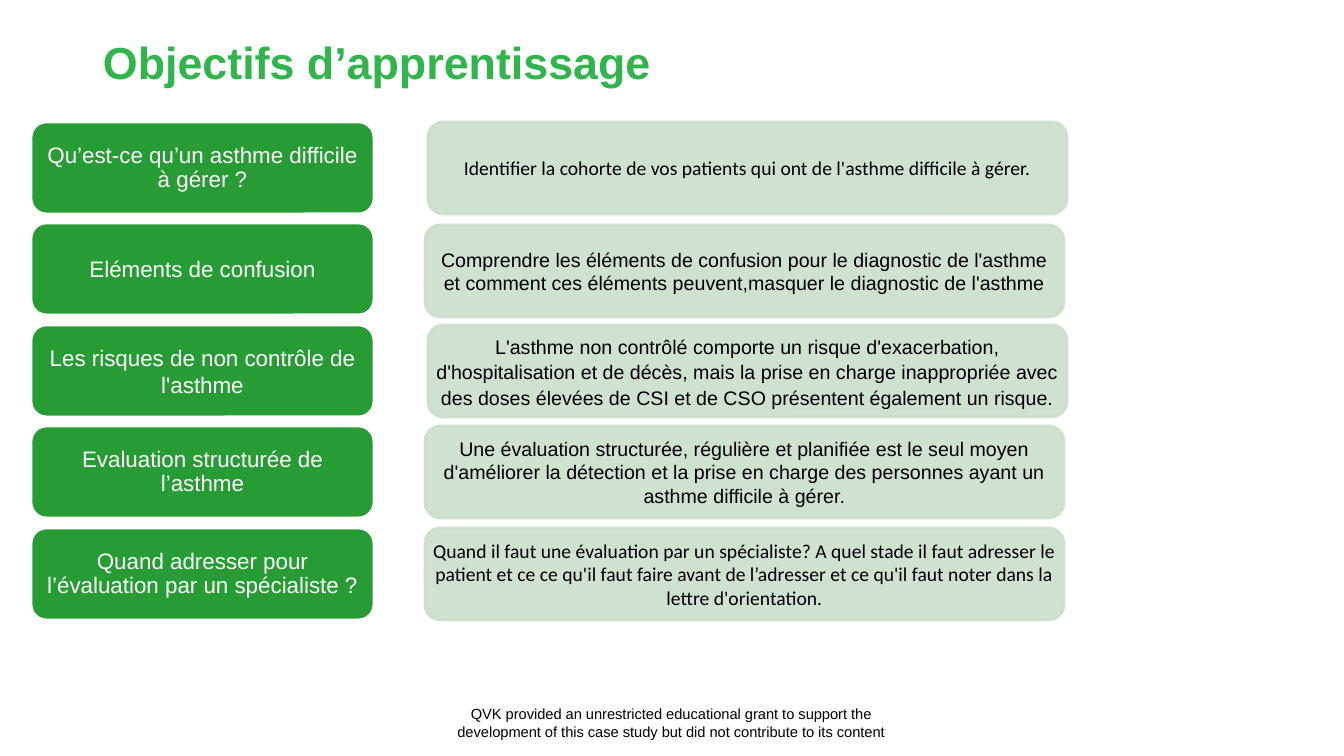
from lxml.etree import SubElement
from pptx import Presentation
from pptx.dml.color import RGBColor
from pptx.enum.shapes import MSO_SHAPE
from pptx.enum.text import MSO_ANCHOR, MSO_AUTO_SIZE, PP_ALIGN
from pptx.oxml.ns import qn
from pptx.util import Emu, Pt

PX = 914400 / 100.8
TITLE_GREEN = RGBColor(0x31, 0xB4, 0x4B)
TOPIC_GREEN = RGBColor(0x27, 0x9C, 0x34)
PALE_GREEN = RGBColor(0xCB, 0xDE, 0xCC)
WHITE = RGBColor(0xFF, 0xFF, 0xFF)
BLACK = RGBColor(0, 0, 0)

ROW_TOP, ROW_PITCH, ROW_HEIGHT = 122, 101.5, 92

# topic, its line spacing, goal, its font, its line spacing, goal left, goal shift down
objectives = [
    ("Qu’est-ce qu’un asthme difficile à gérer ?", 0.9,
     "Identifier la cohorte de vos patients qui ont de l'asthme difficile à gérer.",
     "Calibri", 1.0, 428, 0),
    ("Eléments de confusion", 1.0,
     "Comprendre les éléments de confusion pour le diagnostic de l'asthme et comment "
     "ces éléments peuvent,masquer le diagnostic de l'asthme",
     "Arial", 1.0, 425, 2),
    ("Les risques de non contrôle de l'asthme", 1.0,
     "L'asthme non contrôlé comporte un risque d'exacerbation, d'hospitalisation et de "
     "décès, mais la prise en charge inappropriée avec des doses élevées de CSI et de "
     "CSO présentent également un risque.",
     "Arial", 1.09, 428, 0),
    ("Evaluation structurée de l’asthme", 0.9,
     "Une évaluation structurée, régulière et planifiée est le seul moyen d'améliorer "
     "la détection et la prise en charge des personnes ayant un asthme difficile à gérer.",
     "Arial", 1.0, 425, 0),
    ("Quand adresser pour l’évaluation par un spécialiste ?", 0.9,
     "Quand il faut une évaluation par un spécialiste? A quel stade il faut adresser le "
     "patient et ce ce qu'il faut faire avant de l’adresser et ce qu'il faut noter dans "
     "la lettre d'orientation.",
     "Calibri", 1.0, 425, 0),
]


def write(shape, text, size, color, font="Arial", bold=False, align=PP_ALIGN.CENTER,
          anchor=MSO_ANCHOR.MIDDLE, spacing=1.0, inset=(10, 5)):
    frame = shape.text_frame
    frame.text = text
    frame.word_wrap = True
    frame.auto_size = MSO_AUTO_SIZE.NONE
    frame.vertical_anchor = anchor
    frame.margin_left = frame.margin_right = Emu(round(inset[0] * PX))
    frame.margin_top = frame.margin_bottom = Emu(round(inset[1] * PX))
    paragraph = frame.paragraphs[0]
    paragraph.alignment = align
    paragraph.line_spacing = spacing
    run_font = paragraph.runs[0].font
    run_font.name, run_font.size, run_font.bold = font, Pt(size), bold
    run_font.color.rgb = color


def add_card(left, top, width, fill, outline, opacity=100):
    card = slide.shapes.add_shape(
        MSO_SHAPE.ROUNDED_RECTANGLE,
        *(Emu(round(n * PX)) for n in (left, top, width, ROW_HEIGHT)))
    card.shadow.inherit = False
    card.fill.solid()
    card.fill.fore_color.rgb = fill
    card.line.color.rgb = outline
    card.line.width = Pt(2)
    if opacity < 100:
        for color in card._element.spPr.iter(qn("a:srgbClr")):
            SubElement(color, qn("a:alpha"), val=str(opacity * 1000))
    return card


deck = Presentation()
deck.slide_width, deck.slide_height = Emu(round(1344 * PX)), Emu(round(756 * PX))
slide = deck.slides.add_slide(deck.slide_layouts[5])

title = slide.shapes.title
title.left, title.top, title.width, title.height = (
    Emu(round(n * PX)) for n in (93, 36, 1010, 86))
write(title, "Objectifs d’apprentissage", 32, TITLE_GREEN, bold=True,
      align=PP_ALIGN.LEFT, anchor=MSO_ANCHOR.TOP, spacing=0.9)

for row, (topic, topic_spacing, goal, goal_font, goal_spacing, goal_left,
          shift) in enumerate(objectives):
    top = int(ROW_TOP + row * ROW_PITCH)
    topic_card = add_card(31, top, 343, TOPIC_GREEN, WHITE)
    write(topic_card, topic, 16, WHITE, spacing=topic_spacing, inset=(7, 4))
    goal_card = add_card(goal_left, top + shift, 639, PALE_GREEN, PALE_GREEN, opacity=90)
    write(goal_card, goal, 14, BLACK, font=goal_font, spacing=goal_spacing, inset=(2, 2))

grant_note = slide.shapes.add_textbox(
    *(Emu(round(n * PX)) for n in (439, 700, 465, 45)))
write(grant_note, "QVK provided an unrestricted educational grant to support the "
      "development of this case study but did not contribute to its content",
      10.5, BLACK, anchor=MSO_ANCHOR.TOP)

deck.save("out.pptx")
